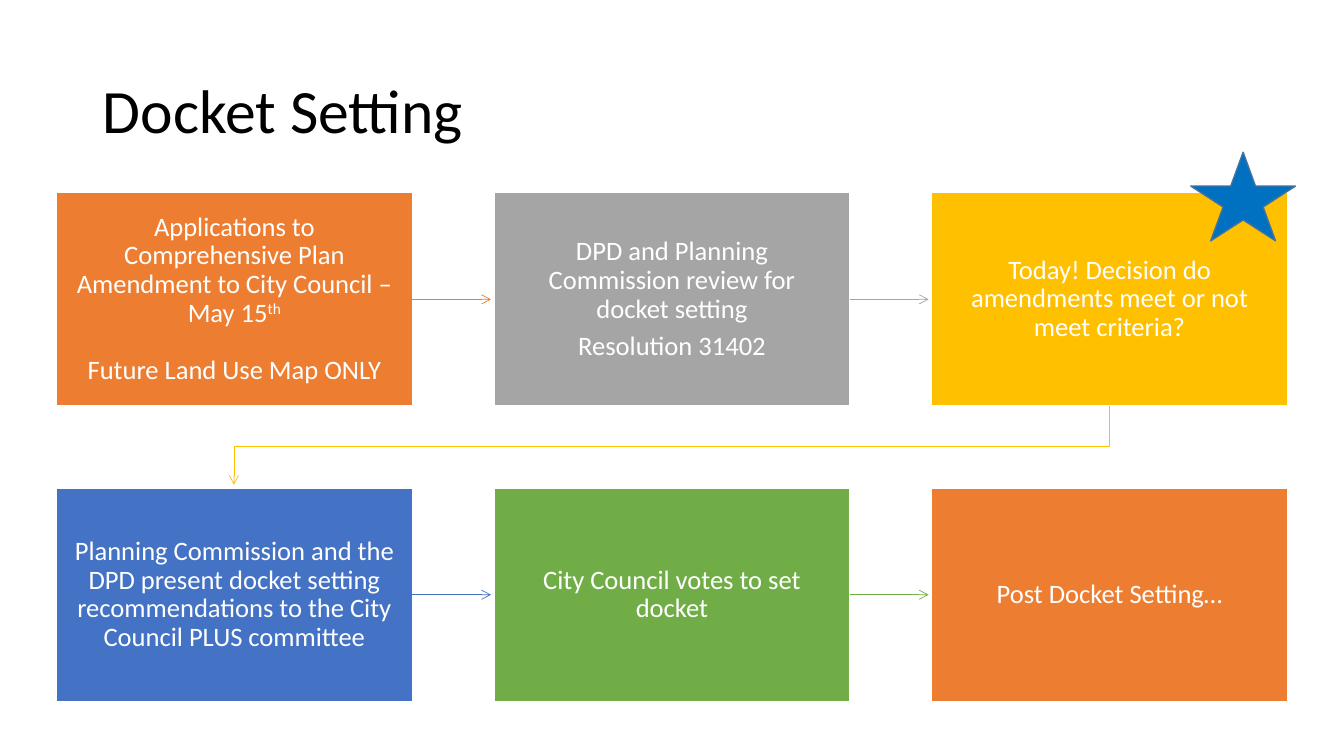
from dataclasses import dataclass

from lxml.etree import SubElement
from pptx import Presentation
from pptx.dml.color import RGBColor
from pptx.enum.shapes import MSO_CONNECTOR, MSO_SHAPE
from pptx.enum.text import MSO_ANCHOR, MSO_AUTO_SIZE, PP_ALIGN
from pptx.oxml.ns import qn
from pptx.shapes.autoshape import Shape
from pptx.shapes.base import BaseShape
from pptx.slide import Slide
from pptx.text.text import _Paragraph
from pptx.util import Emu, Pt

PX = 9144
FONT = "Calibri"
BOX_W, BOX_H = 353, 212
LEFT, TOP = 56, 191
STEP_X, STEP_Y = 434, 293
COLUMNS = 3
INSET = 15
ARROW_GAP = 3
SUPERSCRIPT = "30000"


@dataclass(frozen=True)
class Span:
    text: str
    baseline: str = "0"


@dataclass(frozen=True)
class Step:
    color: str
    paragraphs: tuple[tuple[Span, ...], ...]
    gap: float = 0


STEPS = (
    Step("ED7D31", (
        (Span("Applications to Comprehensive Plan Amendment to City Council – May 15"),
         Span("th", SUPERSCRIPT)),
        (Span("Future Land Use Map ONLY"),),
    ), 20.5),
    Step("A5A5A5", (
        (Span("DPD and Planning Commission review for\ndocket setting"),),
        (Span("Resolution 31402"),),
    ), 6),
    Step("FFC000", ((Span("Today! Decision do amendments meet or not meet criteria?"),),)),
    Step("4472C4", ((Span(
        "Planning Commission and the DPD present docket setting "
        "recommendations to the City Council PLUS committee"),),)),
    Step("70AD47", ((Span("City Council votes to set docket"),),)),
    Step("ED7D31", ((Span("Post Docket Setting…"),),)),
)


def px(n: int) -> Emu:
    return Emu(n * PX)


def rgb(color: str) -> RGBColor:
    return RGBColor.from_string(color)


def add_run(p: _Paragraph, text: str, size: int, color: str, baseline: str = "0") -> None:
    r = p.add_run()
    r.text = text
    r.font.name = FONT
    r.font.size = Pt(size)
    r.font.color.rgb = rgb(color)
    if baseline != "0":
        r._r.get_or_add_rPr().set("baseline", baseline)


def add_title(s: Slide, text: str) -> None:
    sp = s.shapes.title
    sp.left, sp.top, sp.width, sp.height = px(92), px(40), px(1150), px(145)
    tf = sp.text_frame
    tf.auto_size = MSO_AUTO_SIZE.NONE
    tf.vertical_anchor = MSO_ANCHOR.MIDDLE
    p = tf.paragraphs[0]
    p.alignment = PP_ALIGN.LEFT
    p.line_spacing = 0.9
    add_run(p, text, 44, "000000")


def add_filled(s: Slide, kind: MSO_SHAPE, x: int, y: int, w: int, h: int,
               fill: str, line: str) -> Shape:
    sp = s.shapes.add_shape(kind, px(x), px(y), px(w), px(h))
    sp.shadow.inherit = False
    sp.fill.solid()
    sp.fill.fore_color.rgb = rgb(fill)
    sp.line.color.rgb = rgb(line)
    sp.line.width = Pt(1)
    return sp


def add_step(s: Slide, step: Step, index: int) -> Shape:
    row, col = divmod(index, COLUMNS)
    sp = add_filled(s, MSO_SHAPE.RECTANGLE, LEFT + col * STEP_X, TOP + row * STEP_Y,
                    BOX_W, BOX_H, step.color, "FFFFFF")
    tf = sp.text_frame
    tf.word_wrap = True
    tf.vertical_anchor = MSO_ANCHOR.MIDDLE
    tf.margin_left = tf.margin_right = tf.margin_top = tf.margin_bottom = px(INSET)
    for i, spans in enumerate(step.paragraphs):
        p = tf.add_paragraph() if i else tf.paragraphs[0]
        p.alignment = PP_ALIGN.CENTER
        p.line_spacing = 0.9
        p.space_before = Pt(step.gap if i else 0)
        for span in spans:
            for j, text in enumerate(span.text.split("\n")):
                if j:
                    p.add_line_break()
                add_run(p, text, 19, "FFFFFF", span.baseline)
    return sp


def style_arrow(sp: BaseShape, color: str) -> None:
    sp.line.color.rgb = rgb(color)
    sp.line.width = Pt(0.5)
    SubElement(sp.line._get_or_add_ln(), qn("a:tailEnd"), type="arrow")
    SubElement(sp._element.spPr, qn("a:effectLst"))


def add_straight_arrow(s: Slide, box: Shape, color: str) -> None:
    x, y = box.left + box.width, box.top + box.height // 2
    end = x + px(STEP_X - BOX_W - ARROW_GAP)
    sp = s.shapes.add_connector(MSO_CONNECTOR.STRAIGHT, x, y, end, y)
    sp.begin_connect(box, 3)
    style_arrow(sp, color)


def add_return_arrow(s: Slide, color: str) -> None:
    start_x, end_x = LEFT + (COLUMNS - 1) * STEP_X + BOX_W // 2, LEFT + BOX_W // 2
    start_y, end_y = TOP + BOX_H, TOP + STEP_Y - ARROW_GAP
    bend_y = (start_y + TOP + STEP_Y) // 2
    outline = s.shapes.build_freeform(start_x, start_y, scale=PX)
    outline.add_line_segments(
        [(start_x, bend_y), (end_x, bend_y), (end_x, end_y)], close=False)
    sp = outline.convert_to_shape()
    sp.fill.background()
    style_arrow(sp, color)


def main() -> None:
    prs = Presentation()
    prs.slide_width, prs.slide_height = px(1333), px(750)
    s = prs.slides.add_slide(prs.slide_layouts[5])
    add_title(s, "Docket Setting")
    boxes = [add_step(s, step, i) for i, step in enumerate(STEPS)]
    for i, (box, step) in enumerate(zip(boxes[:-1], STEPS)):
        if (i + 1) % COLUMNS:
            add_straight_arrow(s, box, step.color)
        else:
            add_return_arrow(s, step.color)
    add_filled(s, MSO_SHAPE.STAR_5_POINT, 1181, 151, 104, 88, "0070C0", "43739E")
    prs.save("out.pptx")


if __name__ == "__main__":
    main()
